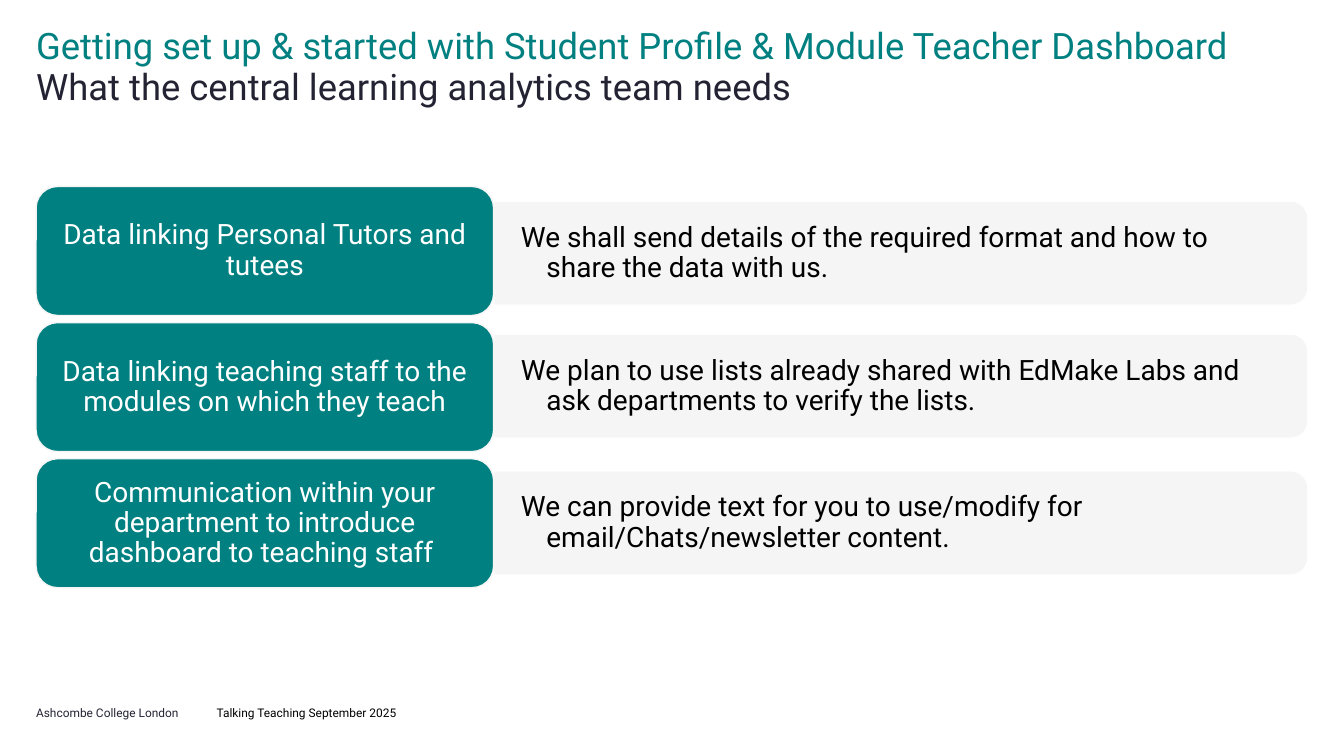
"""Build the slide on what the learning analytics team needs from departments."""
from dataclasses import dataclass

import lxml.etree
import pptx
import pptx.dml.color
import pptx.enum.shapes
import pptx.enum.text
import pptx.oxml.ns
import pptx.util

Cm = pptx.util.Cm
Pt = pptx.util.Pt
RGB = pptx.dml.color.RGBColor
Align = pptx.enum.text.PP_ALIGN
Anchor = pptx.enum.text.MSO_ANCHOR
Shape = pptx.enum.shapes.MSO_SHAPE


@dataclass(frozen=True)
class Theme:
    font: str = "Roboto"
    teal: RGB = RGB(0x00, 0x80, 0x80)
    navy: RGB = RGB(0x23, 0x23, 0x33)
    grey: RGB = RGB(0xF5, 0xF5, 0xF5)
    black: RGB = RGB(0, 0, 0)
    white: RGB = RGB(0xFF, 0xFF, 0xFF)
    title: float = 26
    body: float = 20
    footer: float = 8.5


@dataclass(frozen=True)
class Need:
    label: str
    detail: str
    panel_middle: float


@dataclass(frozen=True)
class Caption:
    text: str
    left: float
    top: float
    width: float
    height: float
    size: float
    color: RGB
    anchor: Anchor
    spacing: float


THEME = Theme()
MARGIN = 0.91
CARD_TOP, CARD_PITCH = 4.7, 3.43
CARD_WIDTH, CARD_HEIGHT = 11.53, 3.25
PANEL_LEFT = MARGIN + CARD_WIDTH
PANEL_LENGTH, PANEL_DEPTH = 20.52, 2.62
DETAIL_WIDTH, DETAIL_HEIGHT = 20.4, 2.36

NEEDS = [
    Need("Data linking Personal Tutors and tutees",
         "We shall send details of the required format and how to share the data with us.", 6.38),
    Need("Data linking teaching staff to the modules on which they teach",
         "We plan to use lists already shared with EdMake Labs and ask departments to verify the lists.", 9.73),
    Need("Communication within your department to introduce dashboard to teaching staff ",
         "We can provide text for you to use/modify for email/Chats/newsletter content.", 13.18),
]
CAPTIONS = [
    Caption("What the central learning analytics team needs", MARGIN, 1.73, 32.05, 1.04,
            THEME.title, THEME.navy, Anchor.TOP, 0.9),
    Caption("Ashcombe College London", MARGIN, 17.75, 3.94, 0.38,
            THEME.footer, THEME.navy, Anchor.BOTTOM, 1.0),
    Caption("Talking Teaching September 2025", 5.46, 17.75, 9.5, 0.38,
            THEME.footer, THEME.black, Anchor.BOTTOM, 1.0),
]


def write(sp, text: str, size: float, color: RGB, anchor: Anchor, align: Align = Align.LEFT,
          inset: tuple[float, float] = (0, 0), spacing: float = 0.9):
    tf = sp.text_frame
    tf.text = text
    tf.word_wrap = True
    tf.auto_size = pptx.enum.text.MSO_AUTO_SIZE.NONE
    tf.vertical_anchor = anchor
    tf.margin_left = tf.margin_right = Cm(inset[0])
    tf.margin_top = tf.margin_bottom = Cm(inset[1])
    p = tf.paragraphs[0]
    p.alignment = align
    p.line_spacing = spacing
    r = p.runs[0]
    r.font.name = THEME.font
    r.font.size = Pt(size)
    r.font.color.rgb = color
    return p


def add_block(s, kind: Shape, box: tuple[float, float, float, float], fill: RGB, line: RGB):
    sp = s.shapes.add_shape(kind, *map(Cm, box))
    sp.shadow.inherit = False
    sp.fill.solid()
    sp.fill.fore_color.rgb = fill
    sp.line.color.rgb = line
    sp.line.width = Pt(1)
    return sp


def add_panel(s, need: Need) -> None:
    left = PANEL_LEFT + (PANEL_LENGTH - PANEL_DEPTH) / 2
    top = need.panel_middle - PANEL_LENGTH / 2
    sp = add_block(s, Shape.ROUND_2_SAME_RECTANGLE, (left, top, PANEL_DEPTH, PANEL_LENGTH),
                   THEME.grey, THEME.white)
    sp.rotation = 90
    qn = pptx.oxml.ns.qn
    for color in sp._element.spPr.iter(qn("a:srgbClr")):
        lxml.etree.SubElement(color, qn("a:alpha")).set("val", "90000")
    box = (PANEL_LEFT, need.panel_middle - DETAIL_HEIGHT / 2, DETAIL_WIDTH, DETAIL_HEIGHT)
    tb = s.shapes.add_textbox(*map(Cm, box))
    p = write(tb, need.detail, THEME.body, THEME.black, Anchor.MIDDLE, inset=(0.69, 0.36))
    pPr = p._p.get_or_add_pPr()
    pPr.set("marL", str(Cm(0.64)))
    pPr.set("indent", str(-Cm(0.64)))


def add_card(s, need: Need, top: float) -> None:
    sp = add_block(s, Shape.ROUNDED_RECTANGLE, (MARGIN, top, CARD_WIDTH, CARD_HEIGHT),
                   THEME.teal, THEME.grey)
    write(sp, need.label, THEME.body, THEME.white, Anchor.MIDDLE, Align.CENTER, (0.2, 0.1))


def add_caption(s, caption: Caption) -> None:
    box = (caption.left, caption.top, caption.width, caption.height)
    tb = s.shapes.add_textbox(*map(Cm, box))
    write(tb, caption.text, caption.size, caption.color, caption.anchor, spacing=caption.spacing)


def main() -> None:
    prs = pptx.Presentation()
    prs.slide_width, prs.slide_height = Cm(33.87), Cm(19.05)
    s = prs.slides.add_slide(prs.slide_layouts[5])
    title = s.shapes.title
    title.left, title.top, title.width, title.height = map(Cm, (MARGIN, 0.71, 33.4, 1.02))
    write(title, "Getting set up & started with Student Profile & Module Teacher Dashboard",
          THEME.title, THEME.teal, Anchor.TOP)
    for i, need in enumerate(NEEDS):
        add_panel(s, need)
        add_card(s, need, CARD_TOP + i * CARD_PITCH)
    for caption in CAPTIONS:
        add_caption(s, caption)
    prs.save("out.pptx")


if __name__ == "__main__":
    main()
